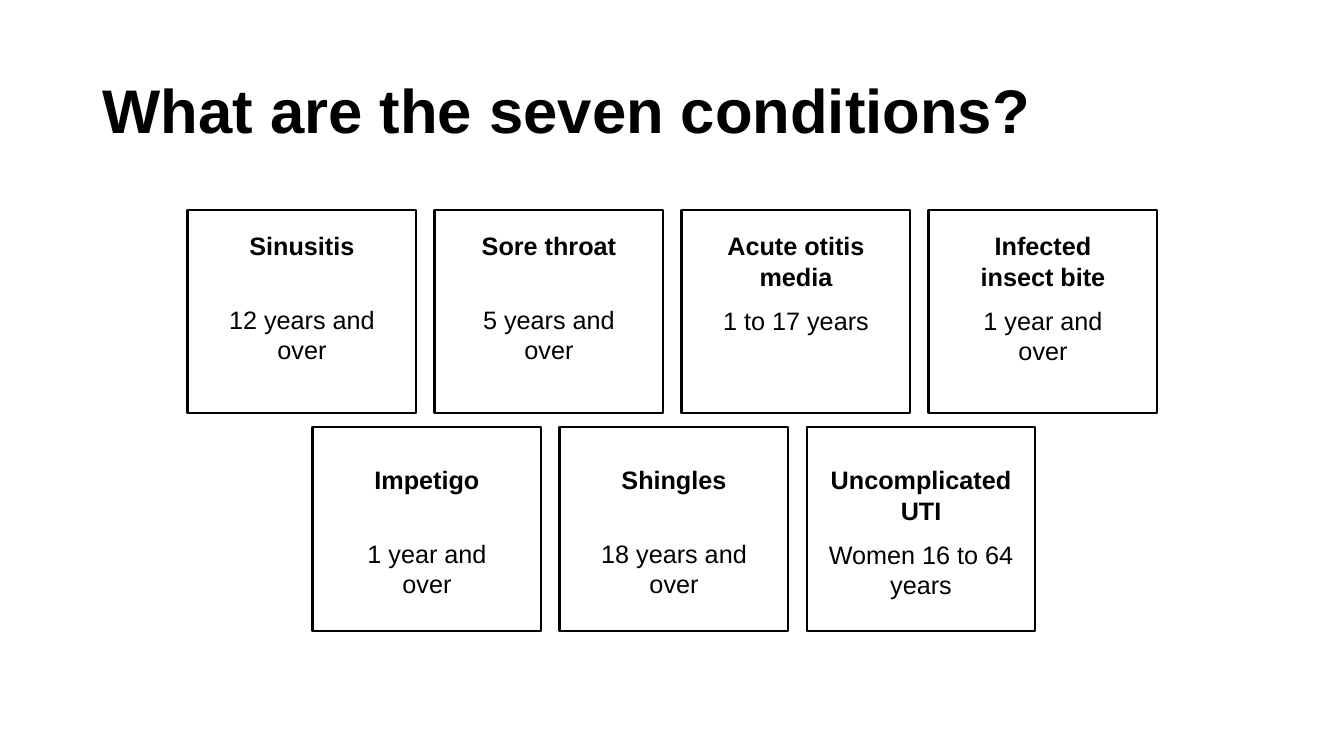
from pptx import Presentation
from pptx.dml.color import RGBColor
from pptx.enum.shapes import MSO_SHAPE as SHAPE
from pptx.enum.text import MSO_ANCHOR as ANCHOR, MSO_AUTO_SIZE as AUTO, PP_ALIGN as ALIGN
from pptx.util import Inches, Pt

COLORS = {"text": "000000", "line": "000000", "box": "FFFFFF"}
FONT = "Arial"
BOX_W, BOX_H, PITCH = 2.27, 2.02, 2.45
INSET, WIDE_INSET = 0.17, 0.09
ONE_LINE_GAP, TWO_LINE_GAP = 31, 10

ROWS = [
    (1.86, 2.08, 2.24, [
        ("Sinusitis", "12 years and over", INSET, ONE_LINE_GAP),
        ("Sore throat", "5 years and over", INSET, ONE_LINE_GAP),
        ("Acute otitis media", "1 to 17 years", INSET, TWO_LINE_GAP),
        ("Infected insect bite", "1 year and over", INSET, TWO_LINE_GAP),
    ]),
    (3.1, 4.24, 4.56, [
        ("Impetigo", "1 year and over", INSET, ONE_LINE_GAP),
        ("Shingles", "18 years and over", INSET, ONE_LINE_GAP),
        ("Uncomplicated UTI", "Women 16 to 64 years", WIDE_INSET, TWO_LINE_GAP),
    ]),
]


def color(name):
    return RGBColor.from_string(COLORS[name])


def format_runs(p, size, bold):
    for r in p.runs:
        r.font.name = FONT
        r.font.size = Pt(size)
        r.font.bold = bold
        r.font.color.rgb = color("text")


def set_title(slide, text):
    sp = slide.shapes.title
    sp.left, sp.top = Inches(0.92), Inches(0.4)
    sp.width, sp.height = Inches(11.5), Inches(1.45)
    tf = sp.text_frame
    tf.text = text
    tf.word_wrap = True
    tf.vertical_anchor = ANCHOR.MIDDLE
    p = tf.paragraphs[0]
    p.alignment = ALIGN.LEFT
    p.line_spacing = 0.9
    format_runs(p, 44, True)


def add_box(slide, x, y):
    sp = slide.shapes.add_shape(
        SHAPE.RECTANGLE, Inches(x), Inches(y), Inches(BOX_W), Inches(BOX_H))
    sp.shadow.inherit = False
    sp.fill.solid()
    sp.fill.fore_color.rgb = color("box")
    sp.line.color.rgb = color("line")
    sp.line.width = Pt(1.5)


def add_condition(slide, x, y, name, ages, inset, gap):
    sp = slide.shapes.add_textbox(
        Inches(x + inset), Inches(y), Inches(BOX_W - 2 * inset), Inches(1.45))
    tf = sp.text_frame
    tf.word_wrap = True
    tf.auto_size = AUTO.SHAPE_TO_FIT_TEXT
    tf.text = f"{name}\n{ages}"
    for p, bold in zip(tf.paragraphs, (True, False)):
        p.alignment = ALIGN.CENTER
        format_runs(p, 18, bold)
    tf.paragraphs[1].space_before = Pt(gap)


def main():
    prs = Presentation()
    prs.slide_width, prs.slide_height = Inches(13.33), Inches(7.5)
    slide = prs.slides.add_slide(prs.slide_layouts[5])
    set_title(slide, "What are the seven conditions?")
    for left, box_top, text_top, conditions in ROWS:
        for i, condition in enumerate(conditions):
            x = left + i * PITCH
            add_box(slide, x, box_top)
            add_condition(slide, x, text_top, *condition)
    prs.save("out.pptx")


if __name__ == "__main__":
    main()
